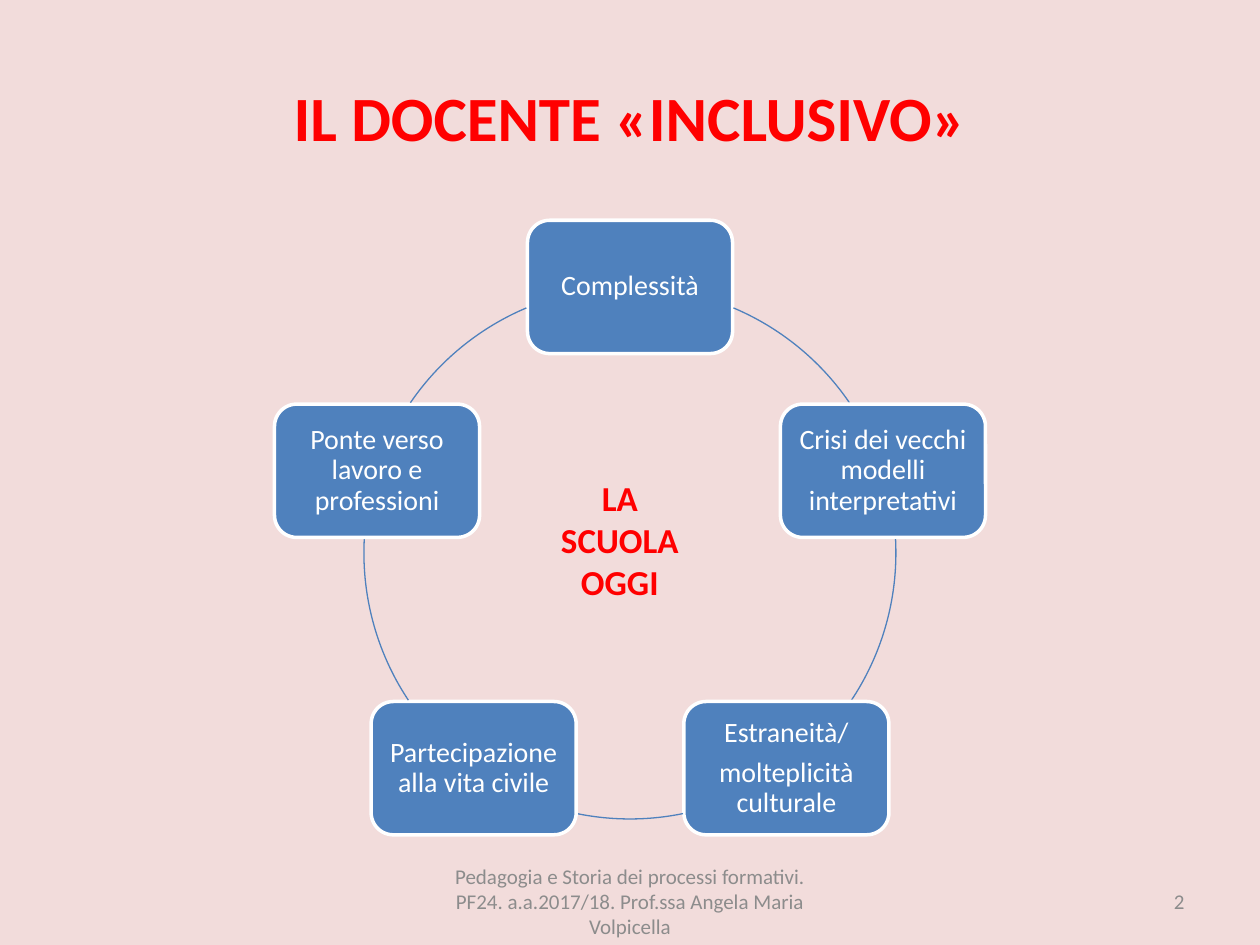
"""Build the slide on the inclusive teacher, with a cycle of five themes."""
import math

from pptx import Presentation
from pptx.dml.color import RGBColor
from pptx.enum.shapes import MSO_SHAPE
from pptx.enum.text import MSO_ANCHOR, PP_ALIGN
from pptx.util import Pt

ROUNDED, ARC = MSO_SHAPE.ROUNDED_RECTANGLE, MSO_SHAPE.ARC
TOP, MIDDLE = MSO_ANCHOR.TOP, MSO_ANCHOR.MIDDLE
CENTER, RIGHT = PP_ALIGN.CENTER, PP_ALIGN.RIGHT

PINK = RGBColor(0xF2, 0xDC, 0xDB)
RED = RGBColor(0xFF, 0x00, 0x00)
BLUE = RGBColor(0x4F, 0x81, 0xBD)
WHITE = RGBColor(0xFF, 0xFF, 0xFF)
GRAY = RGBColor(0x8C, 0x8C, 0x8C)
FONT = "Calibri"

TITLE = "IL DOCENTE «INCLUSIVO»"
THEMES = [
    "Complessità",
    "Crisi dei vecchi modelli interpretativi",
    "Estraneità/\nmolteplicità culturale",
    "Partecipazione alla vita civile",
    "Ponte verso lavoro e professioni",
]
LABELS = [
    ("2", (516.25, 500.5, 167.75, 28.8), 12, GRAY, False, RIGHT, MIDDLE),
    ("LA SCUOLA OGGI", (308.9, 268.5, 90.7, 80), 20, RED, True, CENTER, TOP),
    ("Pedagogia e Storia dei processi formativi. PF24. a.a.2017/18. "
     "Prof.ssa Angela Maria Volpicella",
     (246, 500.5, 228, 28.8), 12, GRAY, False, CENTER, MIDDLE),
]

CENTER_X, CENTER_Y, RADIUS = 360, 316, 152
NODE_WIDTH, NODE_HEIGHT = 117.2, 76.2
ARC_SPANS = [(-67.1, -34.4), (-3, 33.6), (78.5, 101.5), (146.4, 183), (214.4, 247.1)]


def place(shape, left, top, width, height):
    shape.left, shape.top = Pt(left), Pt(top)
    shape.width, shape.height = Pt(width), Pt(height)


def write(shape, text, size, color, bold=False, align=CENTER, anchor=MIDDLE):
    frame = shape.text_frame
    frame.word_wrap = True
    frame.vertical_anchor = anchor
    frame.text = text
    for paragraph in frame.paragraphs:
        paragraph.alignment = align
        paragraph.font.name = FONT
        paragraph.font.size = Pt(size)
        paragraph.font.bold = bold
        paragraph.font.color.rgb = color
    return frame


def add_arc(slide, start, end):
    arc = slide.shapes.add_shape(
        ARC, Pt(CENTER_X - RADIUS), Pt(CENTER_Y - RADIUS), Pt(2 * RADIUS), Pt(2 * RADIUS))
    for index, angle in enumerate((start, end)):
        arc.adjustments[index] = angle % 360 * 0.6
    arc.shadow.inherit = False
    arc.fill.background()
    arc.line.color.rgb = BLUE
    arc.line.width = Pt(0.75)


def add_node(slide, text, angle):
    left = CENTER_X + RADIUS * math.cos(angle) - NODE_WIDTH / 2
    top = CENTER_Y + RADIUS * math.sin(angle) - NODE_HEIGHT / 2
    node = slide.shapes.add_shape(
        ROUNDED, Pt(left), Pt(top), Pt(NODE_WIDTH), Pt(NODE_HEIGHT))
    node.shadow.inherit = False
    node.fill.solid()
    node.fill.fore_color.rgb = BLUE
    node.line.color.rgb = WHITE
    node.line.width = Pt(2)
    frame = write(node, text, 16, WHITE)
    frame.margin_left = frame.margin_right = Pt(5)
    frame.margin_top = frame.margin_bottom = Pt(5)
    for index, paragraph in enumerate(frame.paragraphs):
        paragraph.line_spacing = 0.9
        paragraph.space_before = Pt(5.6 if index else 0)


def main():
    presentation = Presentation()
    presentation.slide_width, presentation.slide_height = Pt(720), Pt(540)
    slide = presentation.slides.add_slide(presentation.slide_layouts[5])
    slide.background.fill.solid()
    slide.background.fill.fore_color.rgb = PINK

    title = slide.shapes.title
    place(title, 36, 21.6, 648, 90)
    write(title, TITLE, 36, RED, bold=True)

    step = 2 * math.pi / len(THEMES)
    for index, (theme, span) in enumerate(zip(THEMES, ARC_SPANS)):
        add_node(slide, theme, index * step - math.pi / 2)
        add_arc(slide, *span)

    for text, box, size, color, bold, align, anchor in LABELS:
        label = slide.shapes.add_textbox(*map(Pt, box))
        write(label, text, size, color, bold, align, anchor)

    presentation.save("out.pptx")


if __name__ == "__main__":
    main()
